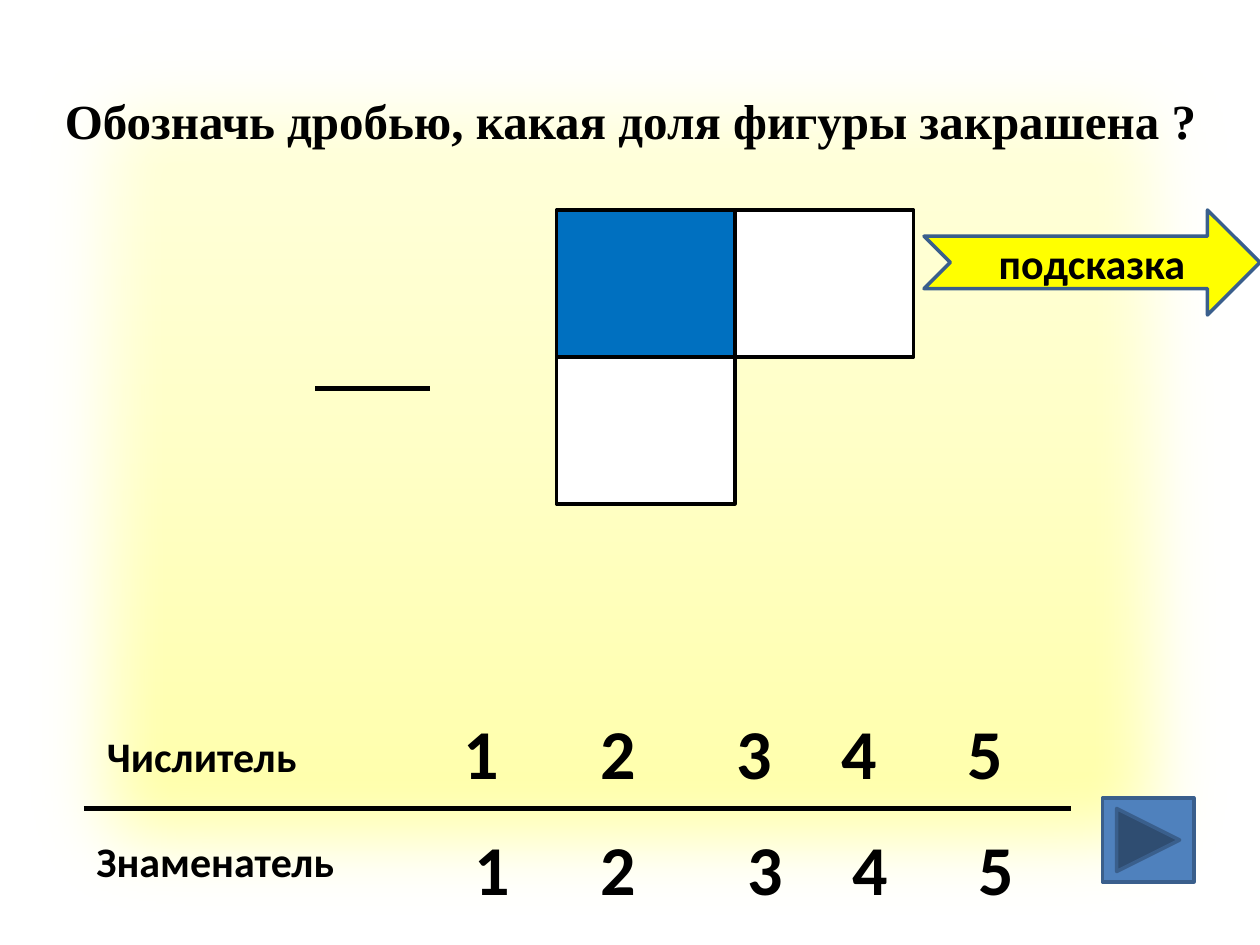
from copy import deepcopy

from lxml.etree import SubElement
from pptx import Presentation
from pptx.dml.color import RGBColor
from pptx.enum.shapes import MSO_CONNECTOR, MSO_SHAPE
from pptx.enum.text import MSO_ANCHOR, MSO_AUTO_SIZE, PP_ALIGN
from pptx.oxml.ns import qn
from pptx.util import Inches, Pt

WIDTH, HEIGHT = 10, 7.5
COL, ROW = WIDTH / 120, HEIGHT / 90  # fine grid of 1/12 inch
BLACK, WHITE, BLUE, YELLOW, EDGE = "000000", "FFFFFF", "0070C0", "FFFF00", "3A5F8C"
SOFT_EDGE = 635000


def color(hex_value):
    return RGBColor.from_string(hex_value)


def place(left, top, width, height):
    """Turn grid columns and rows into lengths."""
    return (Inches(left * COL), Inches(top * ROW),
            Inches(width * COL), Inches(height * ROW))


def add_block(shapes, kind, box, fill, line):
    block = shapes.add_shape(kind, *place(*box))
    block.shadow.inherit = False
    block.fill.solid()
    block.fill.fore_color.rgb = color(fill)
    block.line.color.rgb = color(line)
    block.line.width = Pt(2)
    return block


def style_text(frame, words, size, font="Calibri"):
    frame.text = words
    run_font = frame.paragraphs[0].runs[0].font
    run_font.size, run_font.name, run_font.bold = Pt(size), font, True
    run_font.color.rgb = color(BLACK)


def add_label(slide, box, words, size, font="Calibri", wrap=True):
    frame = slide.shapes.add_textbox(*place(*box)).text_frame
    frame.word_wrap = wrap
    frame.auto_size = MSO_AUTO_SIZE.SHAPE_TO_FIT_TEXT
    style_text(frame, words, size, font)


def add_fraction_bar(slide, left, top, width):
    x, y, length, _ = place(left, top, width, 0)
    bar = slide.shapes.add_connector(MSO_CONNECTOR.STRAIGHT, x, y, x + length, y)
    bar.line.color.rgb = color(BLACK)
    bar.line.width = Pt(3)
    SubElement(bar._element.spPr, qn("a:effectLst"))


def add_backdrop(slide, box):
    """Yellow gradient that fades out towards the slide's edges."""
    backdrop = add_block(slide.shapes, MSO_SHAPE.RECTANGLE, box, WHITE, EDGE)
    backdrop.fill.gradient()
    backdrop.fill.gradient_angle = 90
    properties = backdrop._element.spPr
    stop_list = properties.find(qn("a:gradFill")).find(qn("a:gsLst"))
    stop_list.append(deepcopy(stop_list[0]))
    shades = ((0, "FFFFA0"), (0.5, "FFFFC5"), (1, "FFFFE3"))
    for stop, (position, shade) in zip(backdrop.fill.gradient_stops, shades):
        stop.position = position
        stop.color.rgb = color(shade)
    effects = properties.find(qn("a:effectLst"))
    SubElement(effects, qn("a:softEdge"), rad=str(SOFT_EDGE))


def add_figure(slide, left, top, cell_width, cell_height):
    """L-shaped figure of three cells, one of them coloured."""
    figure = slide.shapes.add_group_shape()
    for column, row, fill in ((0, 0, BLUE), (1, 0, WHITE), (0, 1, WHITE)):
        cell = (left + column * cell_width, top + row * cell_height,
                cell_width, cell_height)
        add_block(figure.shapes, MSO_SHAPE.RECTANGLE, cell, fill, BLACK)


def add_answer_row(slide, name, name_box, digit_columns, digit_top):
    add_label(slide, name_box, name, 24)
    for digit, column in enumerate(digit_columns, start=1):
        add_label(slide, (column, digit_top, 6.1, 9.3), str(digit), 40)


def add_hint(slide, box):
    hint = add_block(slide.shapes, MSO_SHAPE.NOTCHED_RIGHT_ARROW, box, YELLOW, EDGE)
    style_text(hint.text_frame, "подсказка", 24)
    hint.text_frame.vertical_anchor = MSO_ANCHOR.MIDDLE
    hint.text_frame.paragraphs[0].alignment = PP_ALIGN.CENTER


def build_fraction_slide(slide):
    add_backdrop(slide, (0, 0, 120, 90))
    add_fraction_bar(slide, 30, 37, 11)
    add_answer_row(slide, "Числитель", (9, 69, 26, 6), (43, 56, 69, 79, 91), 67)
    add_answer_row(slide, "Знаменатель", (8, 79, 35, 6), (44, 56, 70, 80, 92), 78)
    add_fraction_bar(slide, 8, 77, 94)
    add_block(slide.shapes, MSO_SHAPE.ACTION_BUTTON_FORWARD_OR_NEXT,
              (105, 76, 8.7, 8), "4F81BD", EDGE)
    add_figure(slide, 53, 20, 17, 14)
    add_hint(slide, (88, 20, 32, 10))
    add_label(slide, (5, 8, 112.4, 6.9),
              "Обозначь дробью, какая доля фигуры закрашена ?",
              28, "Times New Roman", wrap=False)


def main():
    deck = Presentation()
    deck.slide_width, deck.slide_height = Inches(WIDTH), Inches(HEIGHT)
    build_fraction_slide(deck.slides.add_slide(deck.slide_layouts[6]))
    deck.save("out.pptx")


if __name__ == "__main__":
    main()
